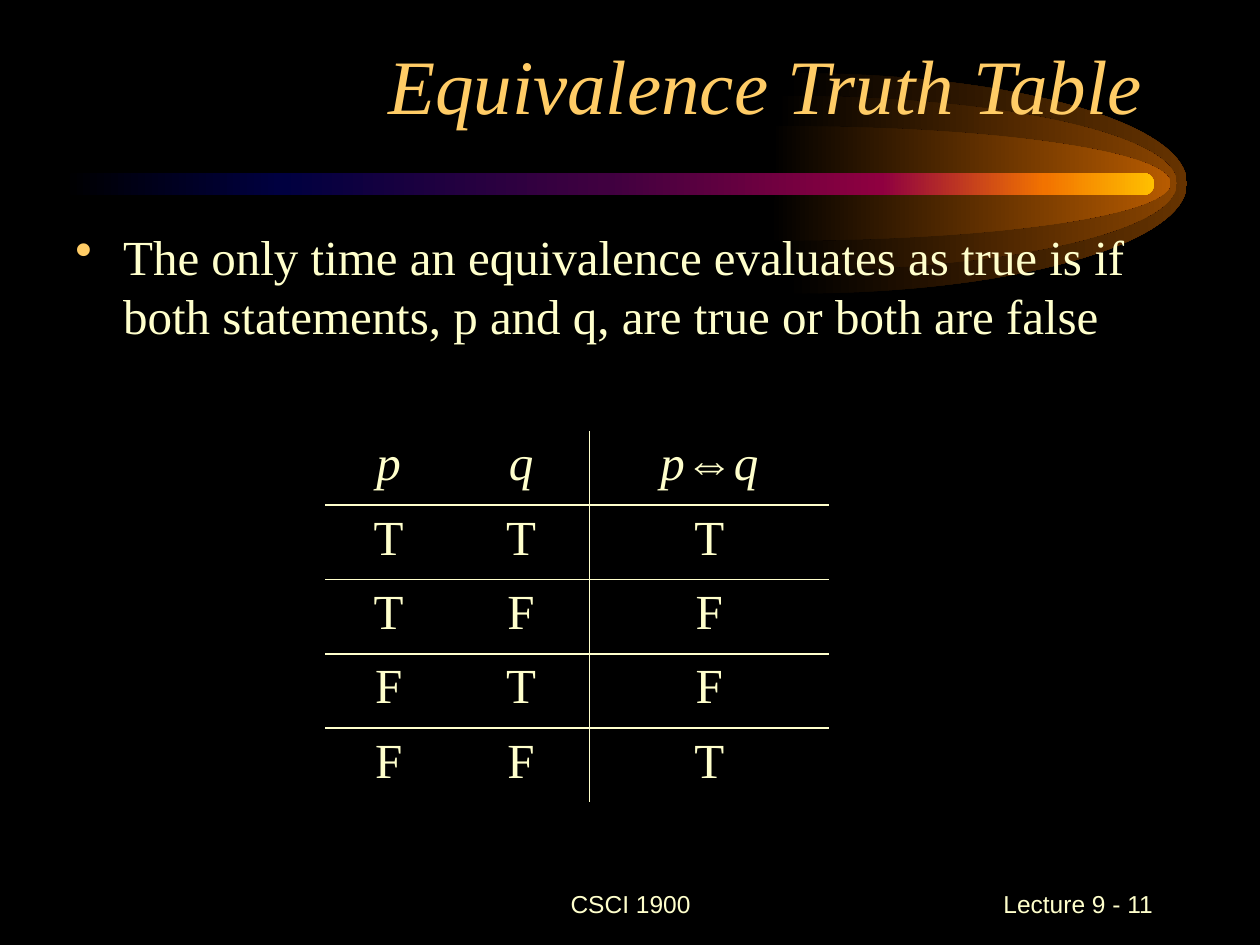
from dataclasses import dataclass

import lxml.etree
import pptx
import pptx.dml.color
import pptx.enum.shapes
import pptx.enum.text
import pptx.oxml.ns
import pptx.util

Inches = pptx.util.Inches
ALIGN = pptx.enum.text.PP_ALIGN
ANCHOR = pptx.enum.text.MSO_ANCHOR


@dataclass(frozen=True)
class Theme:
    background: str = "000000"
    text: str = "FFFFCC"
    accent: str = "FFCC66"
    serif: str = "Times New Roman"
    sans: str = "Arial"
    title_size: int = 44
    body_size: int = 28
    footer_size: int = 14
    rule_width: int = 1
    glows: tuple = ("663300", "894400", "B75B00")
    comet: tuple = ((0, "000000"), (20, "000040"), (50, "400040"),
                    (75, "8F0040"), (90, "F27300"), (100, "FFBF00"))


THEME = Theme()


def add_xml(parent, tag, **attrs):
    child = lxml.etree.SubElement(parent, pptx.oxml.ns.qn(tag))
    for name, value in attrs.items():
        child.set(name, str(value))
    return child


def fill_gradient(sp, stops):
    sp.shadow.inherit = False
    sp.line.fill.background()
    sp.fill.gradient()
    sp.fill.gradient_angle = 0
    stop_list = next(sp._element.iter(pptx.oxml.ns.qn("a:gsLst")))
    for old in list(stop_list):
        stop_list.remove(old)
    for position, color in stops:
        stop = add_xml(stop_list, "a:gs", pos=position * 1000)
        add_xml(stop, "a:srgbClr", val=color)


def curve_segments(sp, curve_count):
    lines = list(sp._element.iter(pptx.oxml.ns.qn("a:lnTo")))
    for i in range(0, 3 * curve_count, 3):
        group = lines[i:i + 3]
        path = group[0].getparent()
        curve = add_xml(path, "a:cubicBezTo")
        path.insert(path.index(group[0]), curve)
        for line in group:
            curve.append(line[0])
            path.remove(line)


def add_glow(s, x, radius_y, color):
    y, radius_x, k = 1.455, 3.13, 0.5523
    arc = ((0, -1), (k, -1), (1, -k), (1, 0), (1, k), (k, 1), (0, 1))
    points = [(x + radius_x * dx, y + radius_y * dy) for dx, dy in arc]
    points += [(x - 0.05, y + radius_y), (x, y)]
    points = [(Inches(px), Inches(py)) for px, py in points]
    builder = s.shapes.build_freeform(*points[0], scale=1.0)
    builder.add_line_segments(points[1:], close=True)
    sp = builder.convert_to_shape()
    curve_segments(sp, 2)
    fill_gradient(sp, ((0, THEME.background), (100, color)))


def add_comet(s):
    for x, height, color in zip((6.29, 6.21, 6.16), (1.75, 1.39, 0.91), THEME.glows):
        add_glow(s, x, height / 2, color)
    bar = s.shapes.add_shape(pptx.enum.shapes.MSO_SHAPE.ROUNDED_RECTANGLE,
                             Inches(0.5), Inches(1.37), Inches(8.66), Inches(0.18))
    bar.adjustments[0] = 0.5
    fill_gradient(bar, THEME.comet)


def write_text(tf, text, size, align, font=THEME.serif, color=THEME.text, italic=False):
    p = tf.paragraphs[0]
    p.alignment = align
    r = p.add_run()
    r.text = text
    r.font.size = pptx.util.Pt(size)
    r.font.name = font
    r.font.italic = italic
    r.font.color.rgb = pptx.dml.color.RGBColor.from_string(color)
    return p


def add_text(s, box, text, size, align, anchor, **style):
    sp = s.shapes.add_textbox(*map(Inches, box))
    tf = sp.text_frame
    tf.word_wrap = True
    tf.vertical_anchor = anchor
    return write_text(tf, text, size, align, **style)


def add_space_before(p):
    spacing = add_xml(p._p.get_or_add_pPr(), "a:spcBef")
    add_xml(spacing, "a:spcPct", val=20000)


def add_bullet(p, indent):
    pPr = p._p.get_or_add_pPr()
    pPr.set("marL", str(Inches(indent)))
    pPr.set("indent", str(-Inches(indent)))
    add_xml(add_xml(pPr, "a:buClr"), "a:srgbClr", val=THEME.accent)
    add_xml(pPr, "a:buChar", char="•")


def set_borders(cell, visible):
    tcPr = cell._tc.get_or_add_tcPr()
    for index, side in enumerate("LRTB"):
        line = add_xml(tcPr, f"a:ln{side}", w=int(pptx.util.Pt(THEME.rule_width)))
        if side in visible:
            add_xml(add_xml(line, "a:solidFill"), "a:srgbClr", val=THEME.text)
        else:
            add_xml(line, "a:noFill")
        tcPr.insert(index, line)


def add_truth_table(s, left, top, widths, row_height, rows):
    frame = s.shapes.add_table(len(rows), len(widths), Inches(left), Inches(top),
                               Inches(sum(widths)), Inches(row_height * len(rows)))
    table = frame.table
    table.first_row = False
    table.horz_banding = False
    for column, width in zip(table.columns, widths):
        column.width = Inches(width)
    result = len(widths) - 1
    for i, values in enumerate(rows):
        table.rows[i].height = Inches(row_height)
        for j, value in enumerate(values):
            cell = table.cell(i, j)
            cell.fill.background()
            p = write_text(cell.text_frame, value, THEME.body_size, ALIGN.CENTER,
                           italic=i == 0)
            add_space_before(p)
            visible = {"T": i > 0, "B": i < len(rows) - 1,
                       "L": j == result, "R": j == result - 1}
            set_borders(cell, [side for side, shown in visible.items() if shown])


def main():
    prs = pptx.Presentation()
    prs.slide_width, prs.slide_height = Inches(10), Inches(7.5)
    s = prs.slides.add_slide(prs.slide_layouts[6])
    s.background.fill.solid()
    s.background.fill.fore_color.rgb = pptx.dml.color.RGBColor.from_string(THEME.background)

    add_comet(s)
    add_text(s, (3.42, 6.92, 3.17, 0.5), "CSCI 1900", THEME.footer_size,
             ALIGN.CENTER, ANCHOR.MIDDLE, font=THEME.sans)
    add_text(s, (7.17, 6.92, 2.08, 0.5), " Lecture 9 - 11", THEME.footer_size,
             ALIGN.RIGHT, ANCHOR.MIDDLE, font=THEME.sans)
    add_text(s, (0.67, 0.25, 8.5, 0.83), "Equivalence Truth Table", THEME.title_size,
             ALIGN.RIGHT, ANCHOR.BOTTOM, color=THEME.accent, italic=True)
    p = add_text(s, (0.5, 1.75, 9.2, 1.96),
                 "The only time an equivalence evaluates as true is if "
                 "both statements, p and q, are true or both are false",
                 THEME.body_size, ALIGN.LEFT, ANCHOR.TOP)
    add_space_before(p)
    add_bullet(p, 0.38)
    add_truth_table(s, 2.58, 3.42, (1.01, 1.09, 1.9), 0.59,
                    (("p", "q", "p⇔q"), "TTT", "TFF", "FTF", "FFT"))
    prs.save("out.pptx")


if __name__ == "__main__":
    main()
